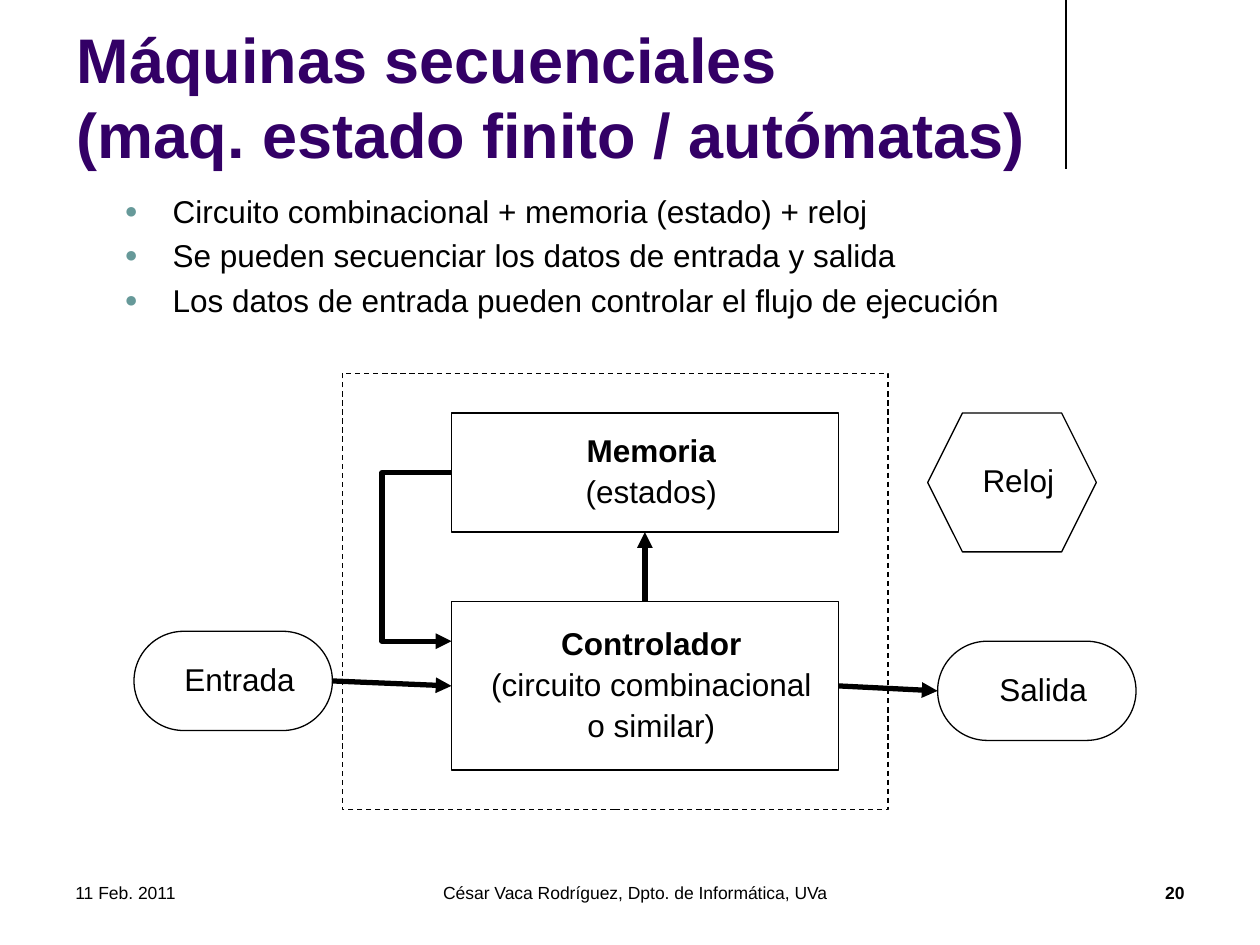
from lxml.etree import SubElement
from pptx import Presentation
from pptx.dml.color import RGBColor
from pptx.enum.dml import MSO_LINE as Dash
from pptx.enum.shapes import MSO_CONNECTOR as Connector, MSO_SHAPE as Shape
from pptx.enum.text import MSO_ANCHOR as Anchor, MSO_AUTO_SIZE as AutoSize, PP_ALIGN as Align
from pptx.oxml.ns import qn
from pptx.util import Inches, Mm, Pt

COLORS = {"ink": "000000", "title": "330066", "bullet": "669999"}
FONT = "Arial"
CELL = Mm(2)
ORIGIN = Inches(0.04), Inches(0.05)
TOP, LEFT, BOTTOM, RIGHT = range(4)


def color(name):
    """Return a named colour of the slide."""
    return RGBColor.from_string(COLORS[name])


def grid(column, row):
    """Return the slide position of a grid point."""
    return round(ORIGIN[0] + column * CELL), round(ORIGIN[1] + row * CELL)


def place(shape, left, top, width, height):
    """Set a shape's frame in inches."""
    shape.left, shape.top = Inches(left), Inches(top)
    shape.width, shape.height = Inches(width), Inches(height)


def style(para, size, bold=False, ink="ink", align=Align.LEFT):
    """Format a paragraph and its runs."""
    para.alignment = align
    for span in para.runs:
        font = span.font
        font.name, font.size, font.bold = FONT, Pt(size), bold
        font.color.rgb = color(ink)


def outline(shape, width=0.75, dash=None):
    """Draw a shape as a plain black outline."""
    shape.shadow.inherit = False
    shape.fill.background()
    shape.line.color.rgb = color("ink")
    shape.line.width = Pt(width)
    if dash:
        shape.line.dash_style = dash


def add_arrowhead(shape):
    """Put a triangle at the end of a line."""
    SubElement(shape.line._get_or_add_ln(), qn("a:tailEnd"), type="triangle")


def add_title(page, text):
    """Fill the title placeholder."""
    title = page.shapes.title
    place(title, 0.51, 0.13, 7.8, 1.26)
    frame = title.text_frame
    frame.text = text
    frame.auto_size, frame.vertical_anchor = AutoSize.NONE, Anchor.MIDDLE
    style(frame.paragraphs[0], 36, True, "title")


def add_bullet(para):
    """Give a paragraph a small coloured bullet with a hanging indent."""
    props = para._p.get_or_add_pPr()
    props.set("marL", str(Inches(0.76)))
    props.set("indent", str(Inches(-0.38)))
    tint = SubElement(props, qn("a:buClr"))
    SubElement(tint, qn("a:srgbClr"), val=COLORS["bullet"])
    SubElement(props, qn("a:buSzPct"), val="70000")
    SubElement(props, qn("a:buFont"), typeface=FONT)
    SubElement(props, qn("a:buChar"), char="●")


def add_list(page, items):
    """Fill the body placeholder with a bullet list."""
    body = page.placeholders[1]
    place(body, 0.51, 1.47, 8.52, 1.34)
    frame = body.text_frame
    frame.text = "\n".join(items)
    frame.auto_size = AutoSize.NONE
    for index, para in enumerate(frame.paragraphs):
        add_bullet(para)
        para.space_before = Pt(4 if index else 0)
        style(para, 18)


def add_block(page, kind, cells, lines=(), bold_head=False, dash=None):
    """Add an outlined shape on the grid with centred lines of text."""
    column, row, columns, rows = cells
    block = page.shapes.add_shape(kind, *grid(column, row), columns * CELL, rows * CELL)
    outline(block, dash=dash)
    if kind == Shape.ROUNDED_RECTANGLE:
        block.adjustments[0] = 0.5
    if lines:
        frame = block.text_frame
        frame.text = "\n".join(lines)
        frame.vertical_anchor = Anchor.MIDDLE
        frame.margin_left = Inches(0.2)
        for index, para in enumerate(frame.paragraphs):
            para.line_spacing = 0.9
            para.space_before = Pt(4 if index else 0)
            style(para, 18, bold_head and index == 0, align=Align.CENTER)
    return block


def add_line(page, start, end, width):
    """Add a straight black line without a shadow."""
    line = page.shapes.add_connector(Connector.STRAIGHT, *start, *end)
    line.line.color.rgb = color("ink")
    line.line.width = Pt(width)
    SubElement(line._element.spPr, qn("a:effectLst"))
    return line


def add_arrow(page, source, source_side, target, target_side):
    """Join two blocks with a thick arrow."""
    arrow = add_line(page, (0, 0), (0, 0), 3)
    arrow.begin_connect(source, source_side)
    arrow.end_connect(target, target_side)
    add_arrowhead(arrow)


def add_feedback(page, points):
    """Draw a thick bent arrow through grid points."""
    start, *rest = [grid(*point) for point in points]
    builder = page.shapes.build_freeform(*start)
    builder.add_line_segments(rest, close=False)
    path_shape = builder.convert_to_shape()
    outline(path_shape, 3)
    add_arrowhead(path_shape)


def add_footer(page, left, width, text, align, bold=False):
    """Add one text of the footer row."""
    box = page.shapes.add_textbox(0, 0, 0, 0)
    place(box, left, 6.83, width, 0.5)
    frame = box.text_frame
    frame.word_wrap, frame.vertical_anchor = True, Anchor.MIDDLE
    frame.text = text
    style(frame.paragraphs[0], 10, bold, align=align)


def add_diagram(page):
    """Draw the sequential machine with its inputs and outputs."""
    controller = add_block(page, Shape.RECTANGLE, (45, 60, 39, 17),
                           ("Controlador", "(circuito combinacional", "o similar)"), True)
    memory = add_block(page, Shape.RECTANGLE, (45, 41, 39, 12), ("Memoria", "(estados)"), True)
    entry = add_block(page, Shape.ROUNDED_RECTANGLE, (13, 63, 20, 10), ("Entrada",))
    output = add_block(page, Shape.ROUNDED_RECTANGLE, (94, 64, 20, 10), ("Salida",))
    add_block(page, Shape.HEXAGON, (93, 41, 17, 14), ("Reloj",))
    add_arrow(page, entry, RIGHT, controller, LEFT)
    add_arrow(page, controller, TOP, memory, BOTTOM)
    add_arrow(page, controller, RIGHT, output, LEFT)
    add_feedback(page, ((45, 47), (38, 47), (38, 64), (45, 64)))
    add_block(page, Shape.RECTANGLE, (34, 37, 55, 44), dash=Dash.DASH)


def main():
    """Build the slide and save it."""
    deck = Presentation()
    deck.slide_width, deck.slide_height = Inches(10), Inches(7.5)
    page = deck.slides.add_slide(deck.slide_layouts[1])
    add_line(page, (Inches(8.46), 0), (Inches(8.46), Inches(1.34)), 0.75)
    add_title(page, "Máquinas secuenciales\v(maq. estado finito / autómatas)")
    add_list(page, ("Circuito combinacional + memoria (estado) + reloj",
                    "Se pueden secuenciar los datos de entrada y salida",
                    "Los datos de entrada pueden controlar el flujo de ejecución"))
    add_diagram(page)
    add_footer(page, 0.5, 2.33, "11 Feb. 2011", Align.LEFT)
    add_footer(page, 3.03, 4.02, "César Vaca Rodríguez, Dpto. de Informática, UVa", Align.CENTER)
    add_footer(page, 7.17, 2.33, "20", Align.RIGHT, True)
    deck.save("out.pptx")


if __name__ == "__main__":
    main()
